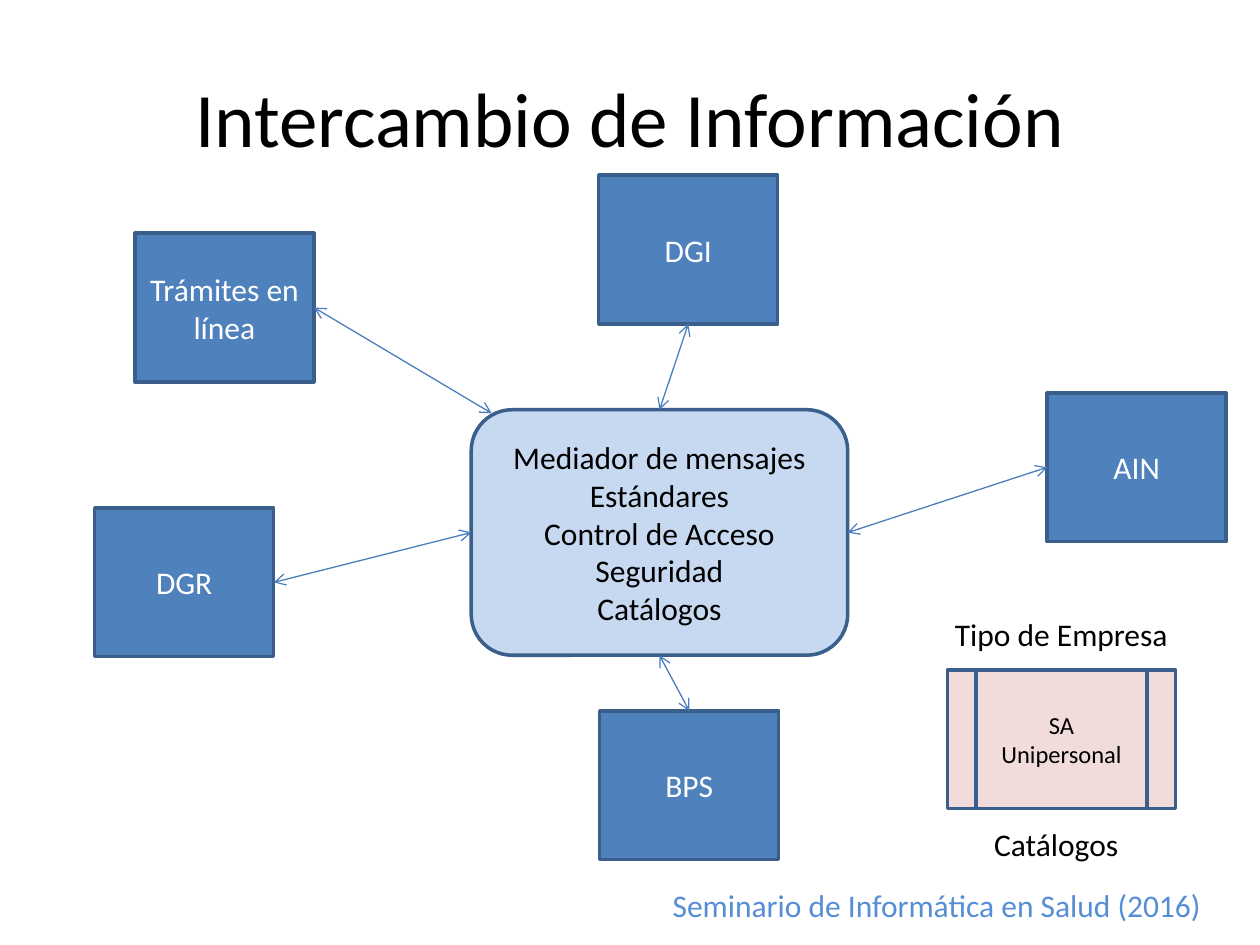
from dataclasses import dataclass

from lxml import etree
from pptx import Presentation
from pptx.dml.color import RGBColor
from pptx.enum.shapes import MSO_CONNECTOR, MSO_SHAPE
from pptx.enum.text import MSO_ANCHOR, MSO_AUTO_SIZE, PP_ALIGN
from pptx.oxml.ns import qn
from pptx.util import Cm, Pt

RECT = MSO_SHAPE.RECTANGLE
ROUND = MSO_SHAPE.ROUNDED_RECTANGLE
PROCESS = MSO_SHAPE.FLOWCHART_PREDEFINED_PROCESS
STRAIGHT = MSO_CONNECTOR.STRAIGHT
MIDDLE = MSO_ANCHOR.MIDDLE
LEFT, CENTER = PP_ALIGN.LEFT, PP_ALIGN.CENTER
# Connection sites shared by rectangles and rounded rectangles
TOP, WEST, BOTTOM, EAST = range(4)


@dataclass(frozen=True)
class Theme:
    font: str = "Calibri"
    title: int = 44
    body: int = 18
    small: int = 14
    black: str = "000000"
    white: str = "FFFFFF"
    blue: str = "4F81BD"
    pale: str = "C6D9F1"
    pink: str = "F2DCDB"
    edge: str = "3A5F8C"
    link: str = "4B7EBC"
    foot: str = "558ED5"


THEME = Theme()


@dataclass(frozen=True)
class Box:
    x: float
    y: float
    w: float
    h: float
    lines: tuple[str, ...]
    fill: str = THEME.blue
    ink: str = THEME.white
    size: int = THEME.body
    kind: int = RECT


@dataclass(frozen=True)
class Label:
    x: float
    y: float
    w: float
    text: str
    align: int = LEFT
    ink: str = THEME.black


@dataclass(frozen=True)
class Node:
    x: float
    y: float
    name: str
    site: int
    hub_site: int | None


NODE_W, NODE_H, LABEL_H = 3.61, 3.0, 1.02
HUB_CORNER = 9.91, 8.33  # on the rounded corner, away from any site

NODES = (
    Node(2.72, 4.7, "Trámites en línea", EAST, None),
    Node(12.07, 3.53, "DGI", BOTTOM, TOP),
    Node(21.11, 7.92, "AIN", WEST, EAST),
    Node(12.09, 14.33, "BPS", TOP, BOTTOM),
    Node(1.91, 10.24, "DGR", EAST, WEST),
)
HUB = Box(9.5, 8.26, 7.59, 4.95,
          ("Mediador de mensajes", "Estándares", "Control de Acceso",
           "Seguridad", "Catálogos"),
          THEME.pale, THEME.black, kind=ROUND)
CATALOG = Box(19.1, 13.51, 4.6, 2.79, ("SA", "Unipersonal"),
              THEME.pink, THEME.black, THEME.small, PROCESS)
LABELS = (
    Label(13.31, 17.73, 11.3, "Seminario de Informática en Salud (2016)",
          ink=THEME.foot),
    Label(18.97, 12.27, 4.85, "Tipo de Empresa", CENTER),
    Label(19.79, 16.51, 3.05, "Catálogos"),
)


def color(code: str) -> RGBColor:
    return RGBColor.from_string(code)


def write(frame, lines: tuple[str, ...], size: int, ink: str, align: int) -> None:
    frame.text = "\n".join(lines)
    for para in frame.paragraphs:
        para.alignment = align
        para.font.name = THEME.font
        para.font.size = Pt(size)
        para.font.color.rgb = color(ink)


def draw_box(shapes, box: Box):
    shape = shapes.add_shape(box.kind, Cm(box.x), Cm(box.y), Cm(box.w), Cm(box.h))
    shape.shadow.inherit = False
    shape.fill.solid()
    shape.fill.fore_color.rgb = color(box.fill)
    shape.line.color.rgb = color(THEME.edge)
    shape.line.width = Pt(2)
    shape.text_frame.vertical_anchor = MIDDLE
    write(shape.text_frame, box.lines, box.size, box.ink, CENTER)
    return shape


def draw_label(shapes, label: Label) -> None:
    frame = shapes.add_textbox(Cm(label.x), Cm(label.y),
                               Cm(label.w), Cm(LABEL_H)).text_frame
    frame.word_wrap = False
    frame.auto_size = MSO_AUTO_SIZE.SHAPE_TO_FIT_TEXT
    write(frame, (label.text,), THEME.body, label.ink, label.align)


def draw_link(shapes, node: Node, shape, hub) -> None:
    x, y = HUB_CORNER
    link = shapes.add_connector(STRAIGHT, 0, 0, Cm(x), Cm(y))
    link.begin_connect(shape, node.site)
    if node.hub_site is not None:
        link.end_connect(hub, node.hub_site)
    link.line.color.rgb = color(THEME.link)
    link.line.width = Pt(0.75)
    # Open arrowheads at both ends, no shadow
    props = link.line._get_or_add_ln()
    for end in ("a:headEnd", "a:tailEnd"):
        etree.SubElement(props, qn(end)).set("type", "arrow")
    etree.SubElement(link._element.spPr, qn("a:effectLst"))


def main() -> None:
    deck = Presentation()
    deck.slide_width, deck.slide_height = Cm(25.4), Cm(19.05)
    slide = deck.slides.add_slide(deck.slide_layouts[5])
    shapes = slide.shapes

    # Title
    title = shapes.title
    title.left, title.top = Cm(1.27), Cm(0.76)
    title.width, title.height = Cm(22.86), Cm(3.18)
    title.text_frame.vertical_anchor = MIDDLE
    write(title.text_frame, ("Intercambio de Información",),
          THEME.title, THEME.black, CENTER)

    # Agencies around the message hub
    agents = [draw_box(shapes, Box(n.x, n.y, NODE_W, NODE_H, (n.name,)))
              for n in NODES]
    hub = draw_box(shapes, HUB)
    for node, agent in zip(NODES, agents):
        draw_link(shapes, node, agent, hub)

    # Catalogue and captions
    draw_box(shapes, CATALOG)
    for label in LABELS:
        draw_label(shapes, label)

    deck.save("out.pptx")


if __name__ == "__main__":
    main()
